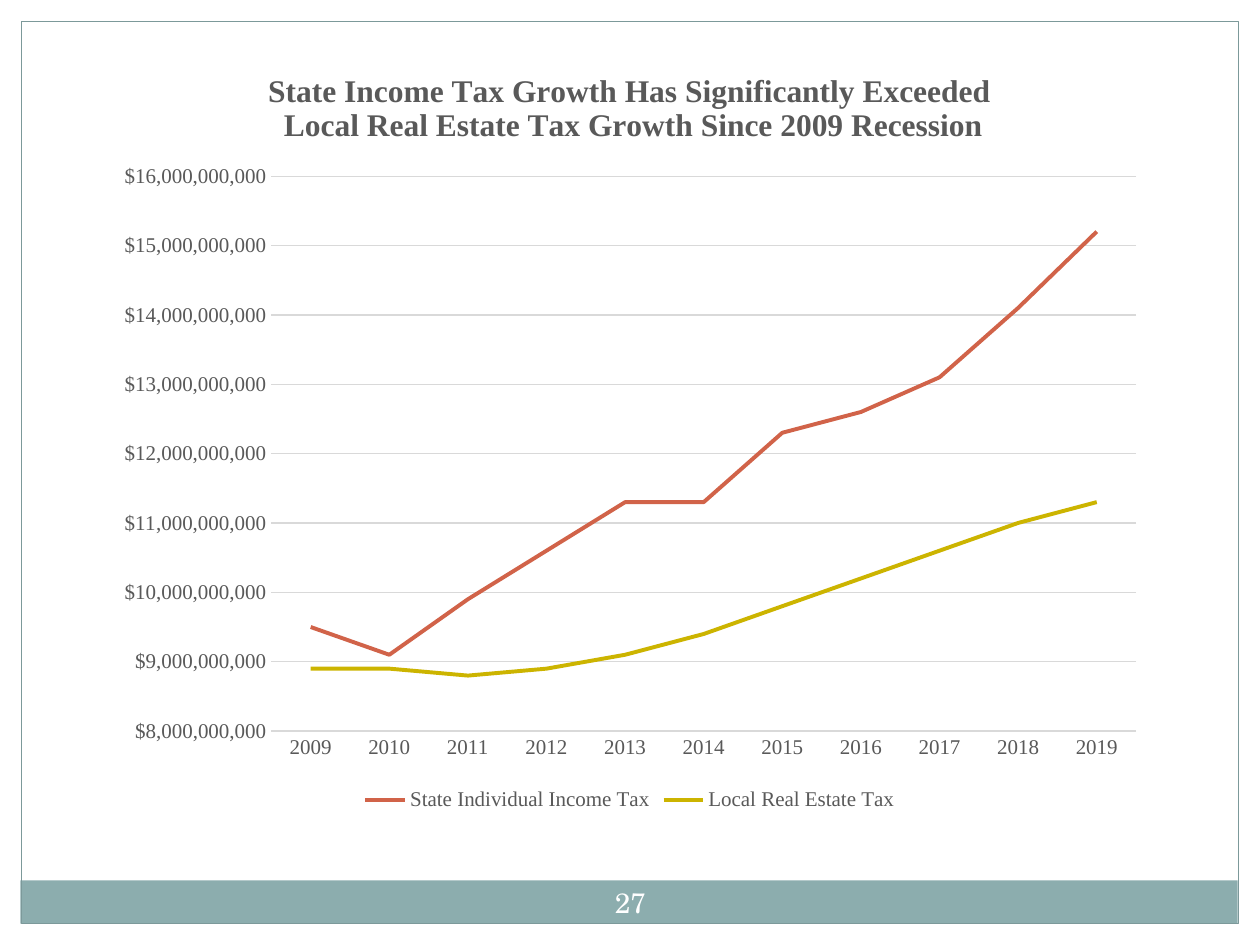
import pptx
import pptx.chart.data
import pptx.dml.color
import pptx.enum.chart
import pptx.enum.shapes
import pptx.enum.text
import pptx.oxml
import pptx.oxml.ns
import pptx.util
from pptx.util import Cm, Pt

HEADING = [
    "State Income Tax Growth Has Significantly Exceeded",
    " Local Real Estate Tax Growth Since 2009 Recession",
]
YEARS = [str(year) for year in range(2009, 2020)]
BILLION = 10**9
TAXES = [  # name, line colour, billions of dollars per year
    ("State Individual Income Tax", "D16349",
     [9.5, 9.1, 9.9, 10.6, 11.3, 11.3, 12.3, 12.6, 13.1, 14.1, 15.2]),
    ("Local Real Estate Tax", "CCB400",
     [8.9, 8.9, 8.8, 8.9, 9.1, 9.4, 9.8, 10.2, 10.6, 11.0, 11.3]),
]
PAGE_NUMBER = "27"
GREY, GRID = "595959", "D9D9D9"
SERIF = "Times New Roman"

# Lengths in centimetres
PAGE_WIDTH, PAGE_HEIGHT, MARGIN = 25.4, 19.05, 0.43
CHART_WIDTH, HEADING_WIDTH = 21.26, 14.74
BANDS = [  # left, top, width, height, fill
    (0, 0, PAGE_WIDTH, MARGIN, "FFFFFF"),
    (PAGE_WIDTH - MARGIN, 0, MARGIN, PAGE_HEIGHT, "FFFFFF"),
    (0, 0, MARGIN, PAGE_HEIGHT, "FFFFFF"),
    (0.41, 17.75, 24.54, 0.87, "8CADAE"),
]


def color(hex_code):
    return pptx.dml.color.RGBColor.from_string(hex_code)


def style_font(font, size, hex_code, face=SERIF, bold=False):
    font.name, font.size, font.bold = face, Pt(size), bold
    font.color.rgb = color(hex_code)


def style_line(line, hex_code, width):
    line.color.rgb = color(hex_code)
    line.width = Pt(width)


def add_panel(slide, left, top, width, height):
    panel = slide.shapes.add_shape(
        pptx.enum.shapes.MSO_SHAPE.RECTANGLE,
        Cm(left), Cm(top), Cm(width), Cm(height))
    panel.shadow.inherit = False
    return panel


def add_frame(slide):
    for *place, hex_code in BANDS:
        band = add_panel(slide, *place)
        band.fill.solid()
        band.fill.fore_color.rgb = color(hex_code)
        band.line.fill.background()
    border = add_panel(slide, MARGIN, MARGIN,
                       PAGE_WIDTH - 2 * MARGIN, PAGE_HEIGHT - 2 * MARGIN)
    border.fill.background()
    style_line(border.line, "7C999A", 0.75)


def set_layout(parent, index, target=None, **fractions):
    """Place a chart part by fractions of the chart's size."""
    for old in parent.findall(pptx.oxml.ns.qn("c:layout")):
        parent.remove(old)
    parts = f'<c:layoutTarget val="{target}"/>' if target else ""
    parts += '<c:xMode val="edge"/><c:yMode val="edge"/>'
    parts += "".join(f'<c:{key} val="{value}"/>' for key, value in fractions.items())
    parent.insert(index, pptx.oxml.parse_xml(
        f'<c:layout {pptx.oxml.ns.nsdecls("c")}>'
        f"<c:manualLayout>{parts}</c:manualLayout></c:layout>"))


def add_tax_chart(slide):
    data = pptx.chart.data.CategoryChartData(number_format='"$"#,##0')
    data.categories = YEARS
    for name, _, billions in TAXES:
        data.add_series(name, [round(value * BILLION) for value in billions])
    chart = slide.shapes.add_chart(
        pptx.enum.chart.XL_CHART_TYPE.LINE,
        Cm(2.07), Cm(0.91), Cm(CHART_WIDTH), Cm(15.54), data).chart
    style_font(chart.font, 12, GREY)

    heading = chart.chart_title.text_frame
    for number, text in enumerate(HEADING):
        paragraph = heading.add_paragraph() if number else heading.paragraphs[0]
        run = paragraph.add_run()
        run.text = text
        style_font(run.font, 18, GREY, bold=True)
    chart.chart_title.include_layout = False

    for series, (_, hex_code, _) in zip(chart.plots[0].series, TAXES):
        style_line(series.format.line, hex_code, 2.25)
        series.smooth = False
        series.marker.style = pptx.enum.chart.XL_MARKER_STYLE.NONE
    chart.plots[0].vary_by_categories = False

    years, dollars = chart.category_axis, chart.value_axis
    for axis in (years, dollars):
        axis.major_tick_mark = pptx.enum.chart.XL_TICK_MARK.NONE
        axis.minor_tick_mark = pptx.enum.chart.XL_TICK_MARK.NONE
        style_font(axis.tick_labels.font, 12, GREY)
    style_line(years.format.line, GRID, 0.75)
    dollars.format.line.fill.background()
    dollars.minimum_scale, dollars.maximum_scale = 8 * BILLION, 16 * BILLION
    dollars.major_unit = BILLION
    dollars.tick_labels.number_format = '"$"#,##0'
    dollars.tick_labels.number_format_is_linked = False
    style_line(dollars.major_gridlines.format.line, GRID, 0.75)

    chart.has_legend = True
    chart.legend.position = pptx.enum.chart.XL_LEGEND_POSITION.BOTTOM
    chart.legend.include_in_layout = False
    style_font(chart.legend.font, 12, GREY)

    chart_root = chart.element
    set_layout(chart_root.find(".//" + pptx.oxml.ns.qn("c:title")), 1,
               x=(1 - HEADING_WIDTH / CHART_WIDTH) / 2, y=0.03)
    set_layout(chart_root.find(".//" + pptx.oxml.ns.qn("c:plotArea")), 0,
               target="inner", x=0.16, y=0.17, w=0.82, h=0.72)


def add_page_number(slide):
    box = slide.shapes.add_textbox(Cm(11.86), Cm(17.58), Cm(1.7), Cm(1.22))
    frame = box.text_frame
    frame.word_wrap = True
    frame.vertical_anchor = pptx.enum.text.MSO_ANCHOR.MIDDLE
    frame.margin_left = frame.margin_right = Cm(0.13)
    frame.margin_top = frame.margin_bottom = Cm(0.13)
    frame.paragraphs[0].alignment = pptx.enum.text.PP_ALIGN.CENTER
    run = frame.paragraphs[0].add_run()
    run.text = PAGE_NUMBER
    style_font(run.font, 16, "FFFFFF", "TeX Gyre Schola")


def main():
    deck = pptx.Presentation()
    deck.slide_width, deck.slide_height = Cm(PAGE_WIDTH), Cm(PAGE_HEIGHT)
    slide = deck.slides.add_slide(deck.slide_layouts[6])
    add_frame(slide)
    add_page_number(slide)
    add_tax_chart(slide)
    deck.save("out.pptx")


if __name__ == "__main__":
    main()
